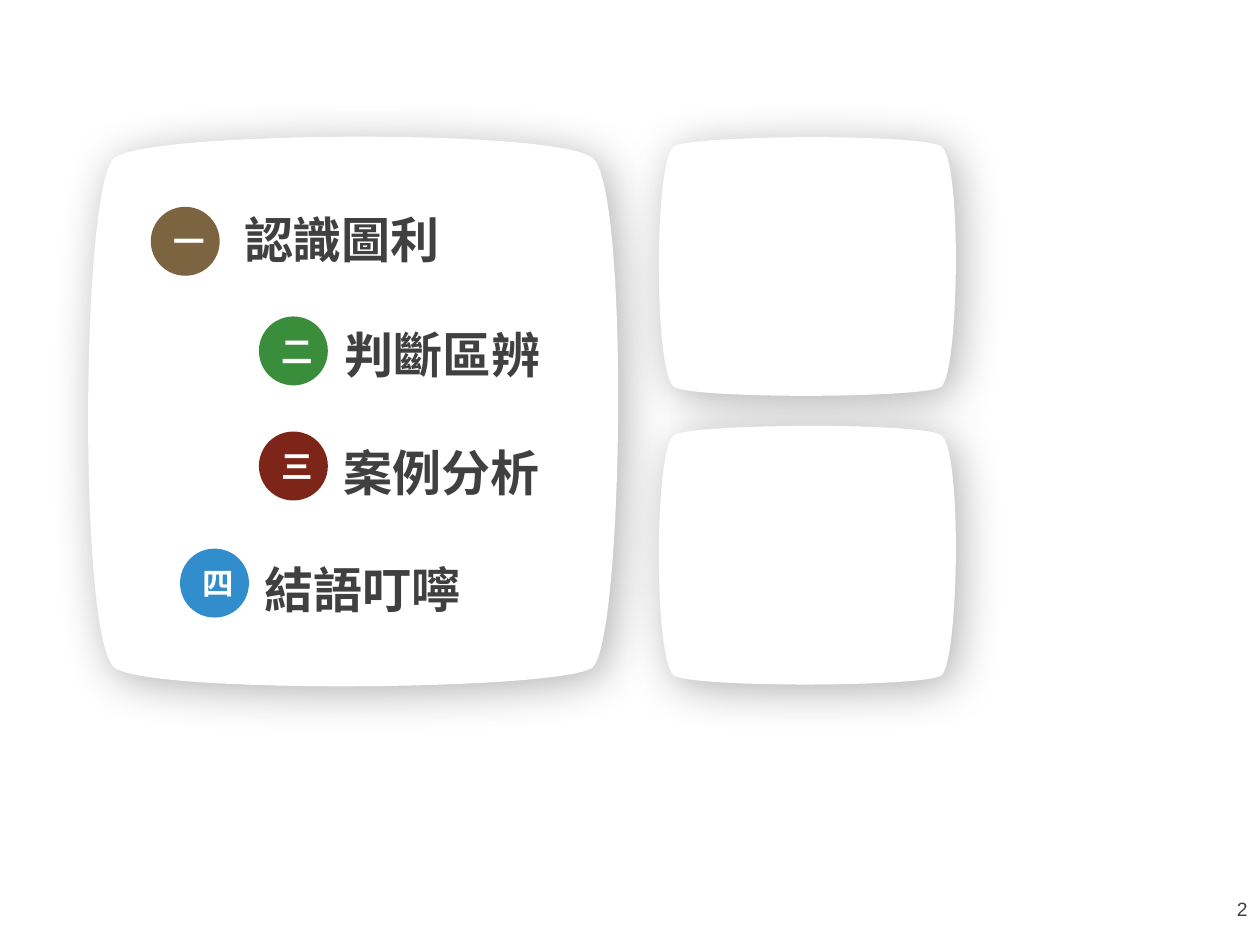
from lxml import etree
from pptx import Presentation
from pptx.dml.color import RGBColor
from pptx.enum.shapes import MSO_SHAPE
from pptx.enum.text import MSO_ANCHOR, MSO_AUTO_SIZE, PP_ALIGN
from pptx.oxml import parse_xml
from pptx.oxml.ns import nsdecls, qn
from pptx.util import Cm, Pt

OVAL = MSO_SHAPE.OVAL
MIDDLE, TOP = MSO_ANCHOR.MIDDLE, MSO_ANCHOR.TOP
LEFT, CENTER, RIGHT = PP_ALIGN.LEFT, PP_ALIGN.CENTER, PP_ALIGN.RIGHT
GROW = MSO_AUTO_SIZE.SHAPE_TO_FIT_TEXT

WHITE = RGBColor(0xFF, 0xFF, 0xFF)
DARK = RGBColor(0x40, 0x40, 0x40)
BROWN = RGBColor(0x7D, 0x64, 0x40)
GREEN = RGBColor(0x39, 0x8D, 0x3B)
RED = RGBColor(0x7D, 0x25, 0x19)
BLUE = RGBColor(0x31, 0x8D, 0xCB)

CJK_FONT = "Noto Sans CJK SC"
BADGE_SIZE = 1.39

# Panel outlines in cm: a start point, then cubic curves (two controls, one end)
LARGE_PANEL = [
    (11.94, 3.18),
    (12.7, 3.73), (12.57, 12.98), (11.94, 13.46),
    (11.33, 13.92), (3.02, 14), (2.31, 13.46),
    (1.57, 12.9), (1.63, 3.68), (2.31, 3.18),
    (3, 2.64), (11.18, 2.59), (11.94, 3.18),
]
SMALL_PANEL = [
    (18.97, 2.95),
    (19.41, 3.23), (19.33, 7.57), (18.97, 7.8),
    (18.64, 8.03), (14, 8.05), (13.59, 7.8),
    (13.18, 7.54), (13.18, 3.2), (13.59, 2.95),
    (13.97, 2.72), (18.57, 2.69), (18.97, 2.95),
]
SMALL_PANEL_PITCH = 5.82

# Number, title, badge colour, badge position, title position (cm)
AGENDA = [
    ("一", "認識圖利", BROWN, (3.04, 4.17), (4.67, 4.09)),
    ("二", "判斷區辨", GREEN, (5.22, 6.38), (6.69, 6.42)),
    ("三", "案例分析", RED, (5.22, 8.7), (6.68, 8.79)),
    ("四", "結語叮嚀", BLUE, (3.63, 11.06), (5.08, 11.15)),
]


def write_text(shape, text, size, color, font=CJK_FONT, bold=False,
               align=LEFT, anchor=TOP, wrap=True):
    frame = shape.text_frame
    frame.word_wrap = wrap
    frame.vertical_anchor = anchor
    para = frame.paragraphs[0]
    para.alignment = align
    span = para.add_run()
    span.text = text
    span.font.size = Pt(size)
    span.font.bold = bold
    span.font.name = font
    span.font.color.rgb = color
    east_asian = etree.SubElement(span.font._element, qn("a:ea"))
    east_asian.set("typeface", font)


def paint(shape, color):
    shape.shadow.inherit = False
    shape.fill.solid()
    shape.fill.fore_color.rgb = color
    shape.line.fill.background()


def bend_segments(shape):
    """Turn every three line segments into one cubic curve."""
    outline = next(shape._element.iter(qn("a:path")))
    segments = outline.findall(qn("a:lnTo"))
    for first in range(0, len(segments), 3):
        curve = etree.Element(qn("a:cubicBezTo"))
        segments[first].addprevious(curve)
        for segment in segments[first:first + 3]:
            curve.append(segment[0])
            outline.remove(segment)


def add_panel(page, outline, shift=0):
    points = [(Cm(x), Cm(y + shift)) for x, y in outline]
    builder = page.shapes.build_freeform(*points[0])
    builder.add_line_segments(points[1:], close=True)
    panel = builder.convert_to_shape()
    bend_segments(panel)
    paint(panel, WHITE)
    # Soft shadow falling to the lower right
    effects = panel._element.spPr.find(qn("a:effectLst"))
    effects.append(parse_xml(
        f'<a:outerShdw {nsdecls("a")} blurRad="{Pt(25)}" dist="{Pt(5)}" '
        'dir="2700000" algn="ctr" rotWithShape="0">'
        '<a:srgbClr val="000000"><a:alpha val="30000"/></a:srgbClr></a:outerShdw>'))


def add_agenda_item(page, number, title, color, badge_at, title_at):
    group = page.shapes.add_group_shape()
    badge = group.shapes.add_shape(
        OVAL, *map(Cm, badge_at), Cm(BADGE_SIZE), Cm(BADGE_SIZE))
    paint(badge, color)
    write_text(badge, number, 18, WHITE, bold=True, align=CENTER, anchor=MIDDLE)
    box = group.shapes.add_textbox(*map(Cm, title_at), Cm(4.5), Cm(1.45))
    write_text(box, title, 28, DARK, bold=True, wrap=False)
    box.text_frame.auto_size = GROW


def add_page_number(page, number):
    box = page.shapes.add_textbox(Cm(23.65), Cm(17.82), Cm(1.75), Cm(1.02))
    write_text(box, number, 11, DARK, font="Arial", align=RIGHT, anchor=MIDDLE)


def main():
    deck = Presentation()
    deck.slide_width, deck.slide_height = Cm(25.4), Cm(19.05)
    page = deck.slides.add_slide(deck.slide_layouts[6])

    # Background panels
    add_panel(page, LARGE_PANEL)
    for row in range(2):
        add_panel(page, SMALL_PANEL, shift=row * SMALL_PANEL_PITCH)

    # Agenda
    for item in AGENDA:
        add_agenda_item(page, *item)

    add_page_number(page, "2")
    deck.save("out.pptx")


if __name__ == "__main__":
    main()
